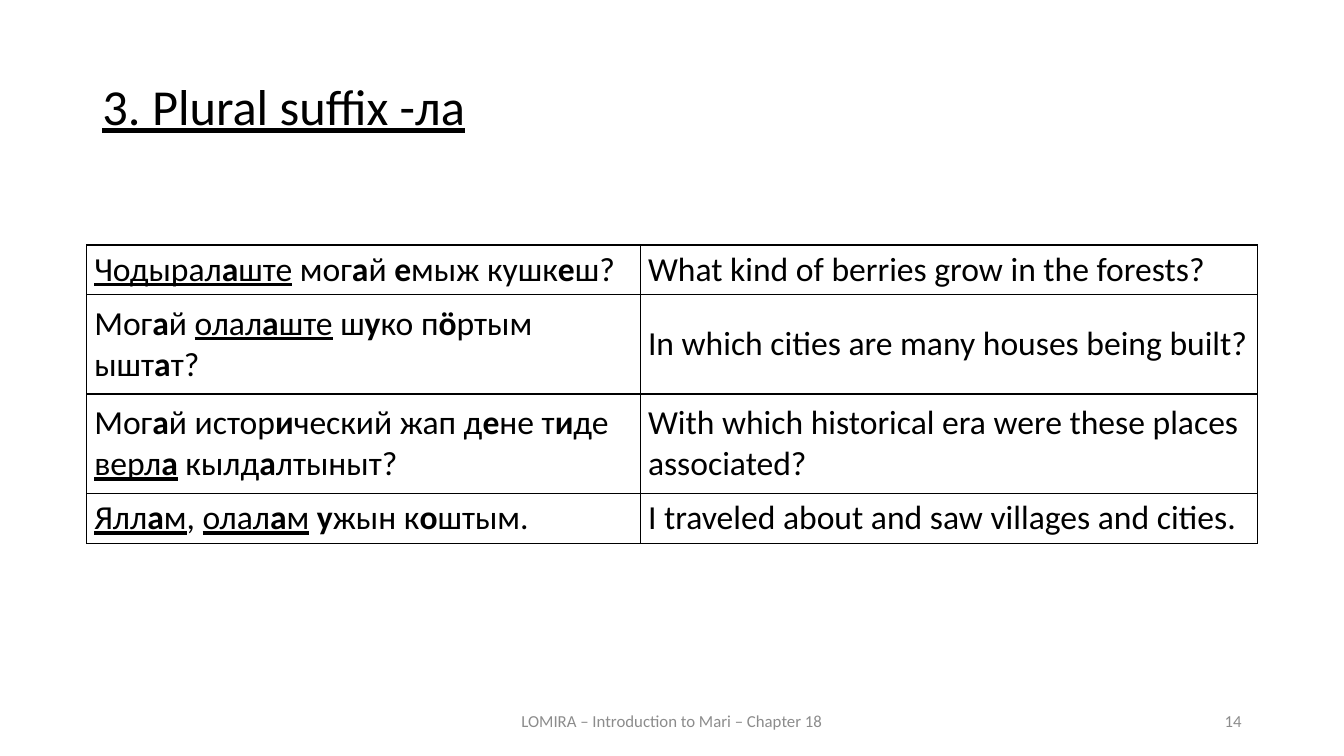
from dataclasses import dataclass

from lxml import etree
from pptx import Presentation
from pptx import util as u
from pptx.dml.color import RGBColor
from pptx.enum import text
from pptx.oxml import ns


@dataclass(frozen=True)
class Theme:
    font: str = "Calibri"
    ink: str = "000000"
    gray: str = "8C8C8C"
    title: int = 36
    body: int = 24
    foot: int = 12
    line: int = 1


# In the cells, * switches bold and _ switches underline
ROWS = [
    ("_Чодырал*а*ште_ мог*а*й *е*мыж кушк*е*ш?",
     "What kind of berries grow in the forests?"),
    ("Мог*а*й _олал*а*ште_ ш*у*ко п*ӧ*ртым ышт*а*т?",
     "In which cities are many houses being built?"),
    ("Мог*а*й истор*и*ческий жап д*е*не т*и*де _верл*а*_ кылд*а*лтыныт?",
     "With which historical era were these places associated?"),
    ("_Ялл*а*м_, _олал*а*м_ *у*жын к*о*штым.",
     "I traveled about and saw villages and cities."),
]


class Deck:
    def __init__(self, theme):
        self.theme = theme
        self.prs = Presentation()
        self.prs.slide_width, self.prs.slide_height = u.Pt(960), u.Pt(540)
        self.slide = self.prs.slides.add_slide(self.prs.slide_layouts[5])

    def style(self, run, size, color, bold=False, under=False):
        font = run.font
        font.name, font.size = self.theme.font, u.Pt(size)
        font.bold, font.underline = bold, under
        font.color.rgb = RGBColor.from_string(color)

    def title(self, words, box):
        shape = self.slide.shapes.title
        shape.left, shape.top, shape.width, shape.height = map(u.Pt, box)
        frame = shape.text_frame
        frame.text = words
        frame.auto_size = text.MSO_AUTO_SIZE.NONE
        frame.vertical_anchor = text.MSO_ANCHOR.TOP
        para = frame.paragraphs[0]
        para.alignment = text.PP_ALIGN.JUSTIFY
        para.line_spacing, para.space_before = 0.9, u.Pt(12)
        self.style(para.runs[0], self.theme.title, self.theme.ink, under=True)

    def label(self, words, box, align):
        frame = self.slide.shapes.add_textbox(*map(u.Pt, box)).text_frame
        frame.word_wrap = True
        frame.vertical_anchor = text.MSO_ANCHOR.MIDDLE
        frame.text = words
        para = frame.paragraphs[0]
        para.alignment = align
        self.style(para.runs[0], self.theme.foot, self.theme.gray)

    def marked(self, para, words):
        bold = under = False
        for i, part in enumerate(words.split("*")):
            bold = i % 2 == 1
            for j, piece in enumerate(part.split("_")):
                if j:
                    under = not under
                if piece:
                    run = para.add_run()
                    run.text = piece
                    self.style(run, self.theme.body, self.theme.ink, bold, under)

    def border(self, cell):
        props = cell._tc.get_or_add_tcPr()
        for side in ("lnL", "lnR", "lnT", "lnB"):
            line = etree.SubElement(props, ns.qn(f"a:{side}"),
                                    w=str(u.Pt(self.theme.line)))
            fill = etree.SubElement(line, ns.qn("a:solidFill"))
            etree.SubElement(fill, ns.qn("a:srgbClr"), val=self.theme.ink)

    def table(self, rows, spot, widths, heights):
        frame = self.slide.shapes.add_table(
            len(rows), len(widths), *map(u.Pt, spot),
            u.Pt(sum(widths)), u.Pt(sum(heights)))
        grid = frame.table
        grid.first_row = grid.horz_banding = False
        for col, width in zip(grid.columns, widths):
            col.width = u.Pt(width)
        for row, height, words in zip(grid.rows, heights, rows):
            row.height = u.Pt(height)
            for cell, entry in zip(row.cells, words):
                self.border(cell)
                cell.fill.background()
                cell.vertical_anchor = text.MSO_ANCHOR.MIDDLE
                cell.margin_left = cell.margin_right = u.Pt(5.4)
                cell.margin_top = cell.margin_bottom = 0
                self.marked(cell.text_frame.paragraphs[0], entry)


def main():
    deck = Deck(Theme())

    # Heading
    deck.title("3. Plural suffix -ла", (66, 54.7, 828, 60))

    # Example sentences with translations
    deck.table(ROWS, (62, 175), (395.5, 440.5), (35.5, 71, 71, 35.5))

    # Footer and page number
    deck.label("LOMIRA – Introduction to Mari – Chapter 18",
               (318, 500.5, 324, 28.75), text.PP_ALIGN.CENTER)
    deck.label("14", (678, 500.5, 216, 28.75), text.PP_ALIGN.RIGHT)

    deck.prs.save("out.pptx")


if __name__ == "__main__":
    main()
